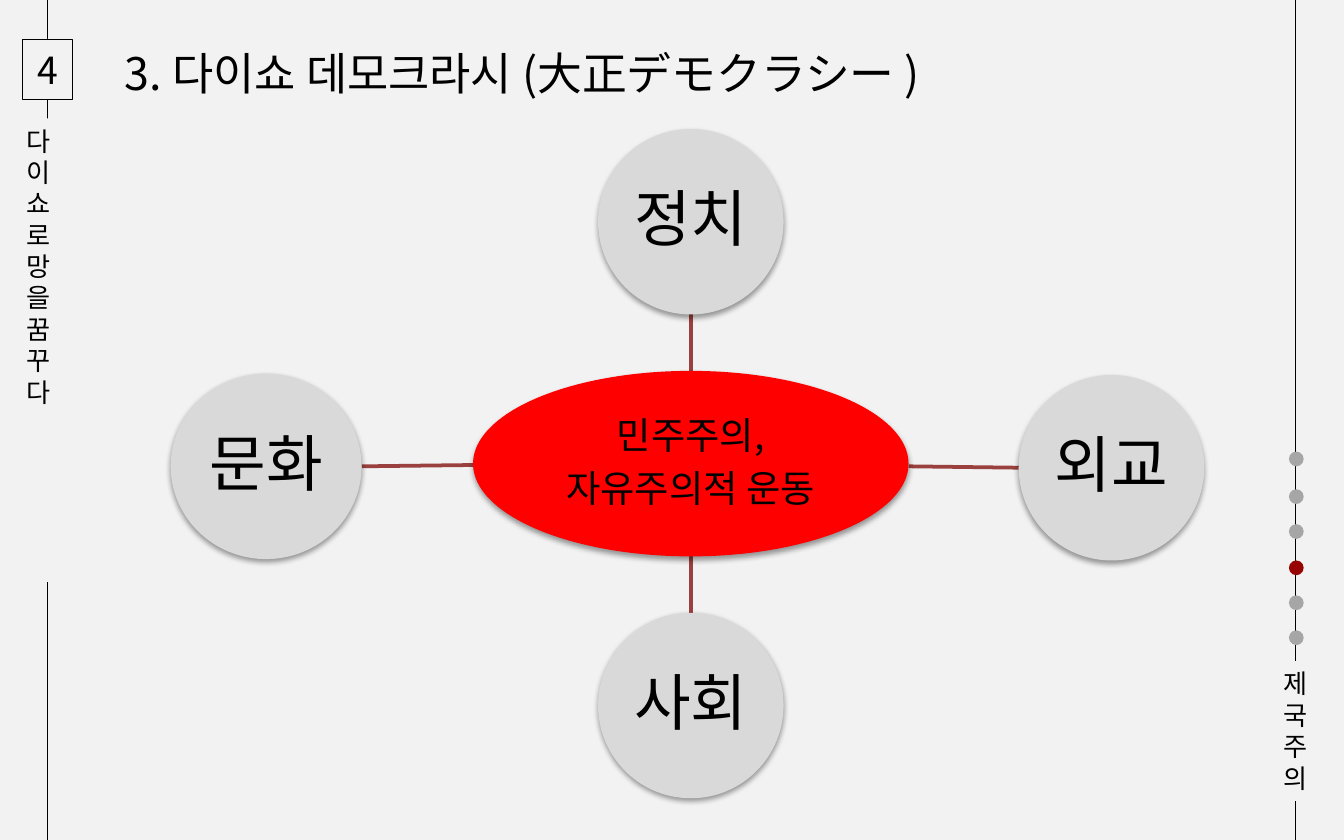
from lxml import etree
from pptx import Presentation, util as u
from pptx.dml.color import RGBColor
from pptx.enum import shapes, text
from pptx.oxml import ns

Inches, Pt = u.Inches, u.Pt
FONT = "Noto Sans CJK KR"
COLORS = {
    "paper": "F2F2F2", "ink": "000000", "circle": "D9D9D9", "core": "FF0000",
    "spoke": "9A403E", "dot": "A6A6A6", "current": "970303",
}
color = {name: RGBColor.from_string(value) for name, value in COLORS.items()}


def write(shape, lines, size, align=text.PP_ALIGN.LEFT, anchor=text.MSO_ANCHOR.TOP,
          wrap=True, inset=None, spread=False):
    """Fill a shape with one paragraph per line; spread sets the diagram's spacing."""
    frame = shape.text_frame
    frame.word_wrap = wrap
    frame.auto_size = text.MSO_AUTO_SIZE.NONE
    frame.vertical_anchor = anchor
    if inset is not None:
        frame.margin_left = frame.margin_right = Inches(inset)
        frame.margin_top = frame.margin_bottom = Inches(inset)
    for number, line in enumerate(lines):
        para = frame.add_paragraph() if number else frame.paragraphs[0]
        para.alignment = align
        if spread:
            para.line_spacing = 0.9
            para.space_after = Pt(round(size * 0.35, 1))
        span = para.add_run()
        span.text = line
        span.font.size = Pt(size)
        span.font.name = FONT
        span.font.color.rgb = color["ink"]
        east_asian = etree.SubElement(span.font._element, ns.qn("a:ea"))
        east_asian.set("typeface", FONT)


def draw_line(x1, y1, x2, y2, tint, width):
    line = page.shapes.add_connector(
        shapes.MSO_CONNECTOR.STRAIGHT, Inches(x1), Inches(y1), Inches(x2), Inches(y2))
    line.line.color.rgb = color[tint]
    line.line.width = Pt(width)
    etree.SubElement(line._element.spPr, ns.qn("a:effectLst"))


deck = Presentation()
deck.slide_width, deck.slide_height = Inches(10), Inches(6.25)
page = deck.slides.add_slide(deck.slide_layouts[5])
page.background.fill.solid()
page.background.fill.fore_color.rgb = color["paper"]

# Margin rules
for x in (0.35, 9.64):
    draw_line(x, 0, x, 6.25, "ink", 0.5)

# Title
title = page.shapes.title
title.left, title.top = Inches(0.83), Inches(0.29)
title.width, title.height = Inches(7.48), Inches(0.5)
write(title, ["3. 다이쇼 데모크라시 (大正デモクラシー )"], 24)

# Page number
number_box = page.shapes.add_shape(
    shapes.MSO_SHAPE.RECTANGLE, Inches(0.17), Inches(0.29), Inches(0.37), Inches(0.45))
number_box.shadow.inherit = False
number_box.fill.solid()
number_box.fill.fore_color.rgb = color["paper"]
number_box.line.color.rgb = color["ink"]
number_box.line.width = Pt(0.5)
write(number_box, ["4"], 20, text.PP_ALIGN.CENTER, text.MSO_ANCHOR.MIDDLE,
      wrap=False, inset=0)

# Labels over the margin rules, narrow enough to wrap after every syllable
labels = [
    (0.1, 0.88, 0.51, 3.45, "다이쇼 로망을 꿈꾸다"),
    (9.45, 4.92, 0.4, 1.04, "제국주의"),
]
for left, top, width, height, words in labels:
    label = page.shapes.add_textbox(
        Inches(left), Inches(top), Inches(width), Inches(height))
    label.fill.solid()
    label.fill.fore_color.rgb = color["paper"]
    write(label, [words], 14)

# Progress dots
for number, top in enumerate((3.36, 3.64, 3.9, 4.17, 4.43, 4.69)):
    dot = page.shapes.add_shape(
        shapes.MSO_SHAPE.OVAL, Inches(9.59), Inches(top), Inches(0.11), Inches(0.11))
    dot.shadow.inherit = False
    dot.fill.solid()
    dot.fill.fore_color.rgb = color["current" if number == 3 else "dot"]
    dot.line.fill.background()

# Spokes from the core to each field
for ends in ((5.14, 2.76, 5.14, 2.34), (6.76, 3.47, 7.58, 3.48),
             (5.14, 4.14, 5.14, 4.56), (3.52, 3.46, 2.69, 3.47)):
    draw_line(*ends, "spoke", 2)

# Core and fields: left, top, width, fill, lines, text size
bubbles = [
    (3.52, 2.76, 3.24, "core", ["민주주의,", "자유주의적 운동"], 20),
    (4.45, 0.96, 1.38, "circle", ["정치"], 33),
    (7.58, 2.79, 1.38, "circle", ["외교"], 33),
    (4.45, 4.56, 1.38, "circle", ["사회"], 33),
    (1.27, 2.78, 1.42, "circle", ["문화"], 33),
]
for left, top, width, tint, lines, size in bubbles:
    bubble = page.shapes.add_shape(
        shapes.MSO_SHAPE.OVAL, Inches(left), Inches(top), Inches(width), Inches(1.38))
    bubble.fill.solid()
    bubble.fill.fore_color.rgb = color[tint]
    bubble.line.fill.background()
    bubble.shadow.inherit = False
    effects = bubble._element.spPr.find(ns.qn("a:effectLst"))
    shadow = etree.SubElement(effects, ns.qn("a:outerShdw"), blurRad=str(Pt(3.1)),
                              dist=str(Pt(1.6)), dir="5400000", rotWithShape="0")
    shade = etree.SubElement(shadow, ns.qn("a:srgbClr"), val=COLORS["ink"])
    etree.SubElement(shade, ns.qn("a:alpha"), val="38000")
    write(bubble, lines, size, text.PP_ALIGN.CENTER, text.MSO_ANCHOR.MIDDLE,
          inset=0.02, spread=True)

deck.save("out.pptx")
